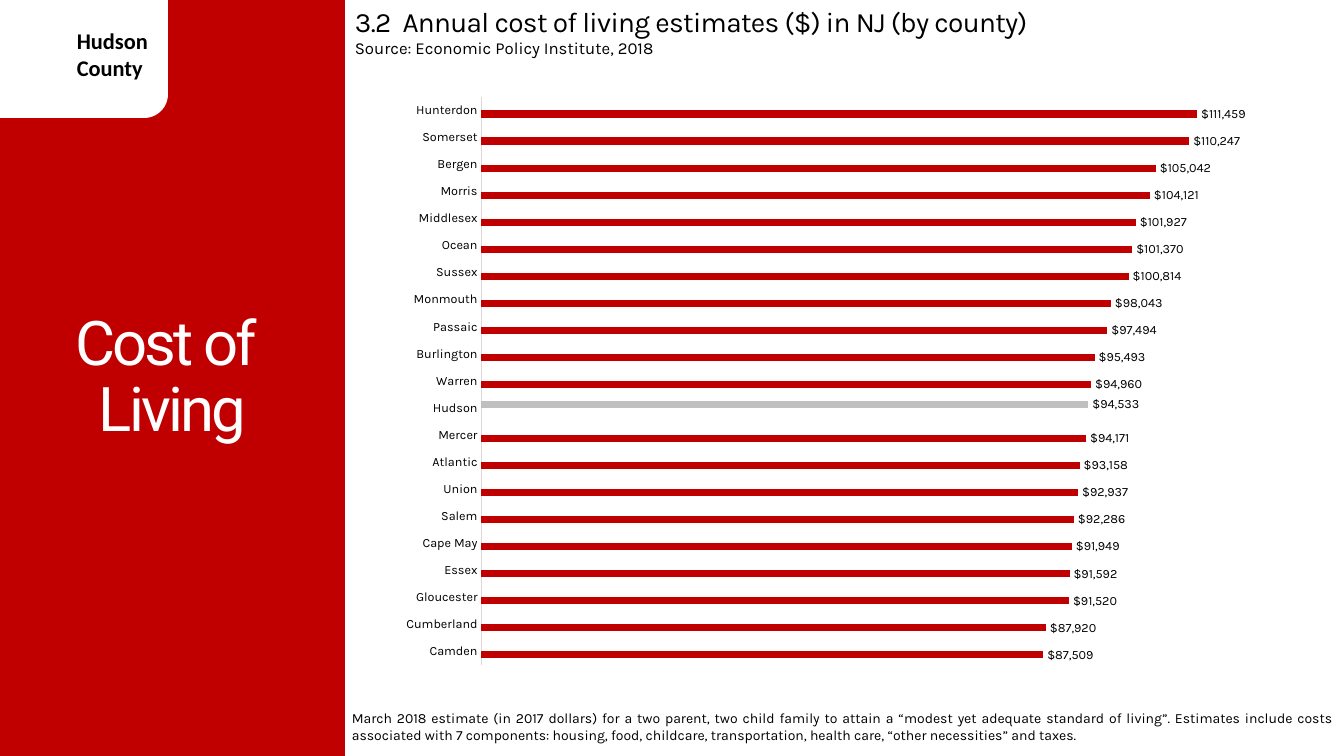
from lxml import etree
from pptx import Presentation
from pptx.chart.data import CategoryChartData
from pptx.dml.color import RGBColor
from pptx.enum.chart import XL_CHART_TYPE, XL_LABEL_POSITION, XL_TICK_MARK
from pptx.enum.shapes import MSO_SHAPE
from pptx.enum.text import MSO_ANCHOR, MSO_AUTO_SIZE, PP_ALIGN
from pptx.oxml import parse_xml
from pptx.oxml.ns import nsdecls, qn
from pptx.util import Pt

PX = 914400 / 100.8
BAR = XL_CHART_TYPE.BAR_CLUSTERED
OUTSIDE = XL_LABEL_POSITION.OUTSIDE_END
NO_TICK = XL_TICK_MARK.NONE
RECT = MSO_SHAPE.RECTANGLE
ROUND_RECT = MSO_SHAPE.ROUNDED_RECTANGLE
TOP, MIDDLE = MSO_ANCHOR.TOP, MSO_ANCHOR.MIDDLE
NO_FIT = MSO_AUTO_SIZE.NONE
LEFT, CENTER, JUSTIFY = PP_ALIGN.LEFT, PP_ALIGN.CENTER, PP_ALIGN.JUSTIFY

RED, GRAY, BLACK, WHITE, AXIS = "C00000", "BFBFBF", "000000", "FFFFFF", "D9D9D9"
DOLLARS = '"$"#,##0'
DOLLARS_RED = r'"$"#,##0_);[Red]\("$"#,##0\)'
HIGHLIGHT = "Hudson"
COSTS = {
    "Camden": 87509, "Cumberland": 87920, "Gloucester": 91520,
    "Essex": 91592, "Cape May": 91949, "Salem": 92286, "Union": 92937,
    "Atlantic": 93158, "Mercer": 94171, "Hudson": 94533, "Warren": 94960,
    "Burlington": 95493, "Passaic": 97494, "Monmouth": 98043,
    "Sussex": 100814, "Ocean": 101370, "Middlesex": 101927,
    "Morris": 104121, "Bergen": 105042, "Somerset": 110247,
    "Hunterdon": 111459,
}
FOOTNOTE = (
    "March 2018 estimate (in 2017 dollars) for a two parent, two child family "
    "to attain a “modest yet adequate standard of living”. Estimates include "
    "costs associated with 7 components: housing, food, childcare, "
    "transportation, health care, “other necessities” and taxes."
)


def px(n):
    return round(n * PX)


def color(hex_string):
    return RGBColor.from_string(hex_string)


def set_font(font, size, name, hex_string, bold=False):
    font.size, font.name, font.bold = Pt(size), name, bold
    font.color.rgb = color(hex_string)


def add_panel(s, kind, box, fill):
    sp = s.shapes.add_shape(kind, *map(px, box))
    sp.shadow.inherit = False
    sp.fill.solid()
    sp.fill.fore_color.rgb = color(fill)
    sp.line.fill.background()


def write(sp, lines, size, name, hex_string, align=LEFT, anchor=TOP,
          bold=False, spacing=None, tracking=0):
    tf = sp.text_frame
    tf.word_wrap = True
    tf.auto_size = NO_FIT
    tf.vertical_anchor = anchor
    for i, line in enumerate(lines):
        p = tf.add_paragraph() if i else tf.paragraphs[0]
        p.alignment = align
        p.line_spacing = spacing
        r = p.add_run()
        r.text = line
        set_font(p.font, size, name, hex_string, bold)
        if tracking:
            r._r.get_or_add_rPr().set("spc", str(round(tracking * 100)))


def add_text(s, box, text, size, name, **style):
    sp = s.shapes.add_textbox(*map(px, box))
    write(sp, [text], size, name, BLACK, **style)


def add_title(s, box, lines):
    sp = s.shapes.title
    s.shapes._spTree.append(sp._element)
    sp.left, sp.top, sp.width, sp.height = map(px, box)
    write(sp, lines, 44, "Roboto", WHITE, align=CENTER, anchor=MIDDLE,
          spacing=0.9, tracking=-2)


def set_plot_layout(chart, x, y, w, h):
    layout = parse_xml(
        f'<c:layout {nsdecls("c")}><c:manualLayout>'
        '<c:layoutTarget val="inner"/><c:xMode val="edge"/><c:yMode val="edge"/>'
        f'<c:x val="{x}"/><c:y val="{y}"/><c:w val="{w}"/><c:h val="{h}"/>'
        '</c:manualLayout></c:layout>')
    area = chart._chartSpace.chart.plotArea
    for old in area.findall(qn("c:layout")):
        area.remove(old)
    area.insert(0, layout)


def format_series(series, fill, number_format):
    series.format.fill.solid()
    series.format.fill.fore_color.rgb = color(fill)
    series.invert_if_negative = False
    labels = series.data_labels
    labels.show_value = True
    labels.position = OUTSIDE
    labels.number_format = number_format
    labels.number_format_is_linked = False
    set_font(labels.font, 9, "Karla", BLACK)


def add_cost_chart(s, box):
    data = CategoryChartData(number_format=DOLLARS)
    data.categories = list(COSTS)
    data.add_series("Series 1", [None if c == HIGHLIGHT else v for c, v in COSTS.items()])
    data.add_series("Series 2", [v if c == HIGHLIGHT else None for c, v in COSTS.items()])
    chart = s.shapes.add_chart(BAR, *map(px, box), data).chart
    chart.has_legend = False
    chart.has_title = False
    set_font(chart.font, 10, "Calibri", BLACK)
    set_plot_layout(chart, 0.12, 0.03, 0.86, 0.95)

    plot = chart.plots[0]
    plot.vary_by_categories = False
    plot.gap_width, plot.overlap = 182, 0
    for series, fill, fmt in zip(plot.series, (RED, GRAY), (DOLLARS_RED, DOLLARS)):
        format_series(series, fill, fmt)

    counties = chart.category_axis
    counties.major_tick_mark = counties.minor_tick_mark = NO_TICK
    counties.format.line.color.rgb = color(AXIS)
    counties.format.line.width = Pt(0.75)
    set_font(counties.tick_labels.font, 9, "Karla", BLACK)

    dollars = chart.value_axis
    dollars.minimum_scale, dollars.maximum_scale = 0, 120000
    dollars.has_major_gridlines = False
    dollars.visible = False


def main():
    prs = Presentation()
    prs.slide_width, prs.slide_height = px(1344), px(756)
    s = prs.slides.add_slide(prs.slide_layouts[5])
    add_panel(s, RECT, (0, 0, 345, 756), RED)
    add_panel(s, ROUND_RECT, (-33, -25, 201, 143), WHITE)
    add_text(s, (67, 22, 98, 65), "Hudson County", 16, "Calibri", bold=True)
    add_title(s, (0, 76, 345, 605), ["Cost of ", "Living"])
    add_text(s, (345, 0, 994, 44),
             "3.2\u00a0 Annual cost of living estimates ($) in NJ (by county)".replace("\u00a0", " "),
             20, "Karla", tracking=-0.5)
    add_text(s, (345, 33, 926, 30), "Source: Economic Policy Institute, 2018", 12, "Karla")
    add_text(s, (342, 704, 1000, 44), FOOTNOTE, 10, "Karla", align=JUSTIFY, anchor=MIDDLE)
    add_cost_chart(s, (374, 79, 896, 598))
    prs.save("out.pptx")


if __name__ == "__main__":
    main()
